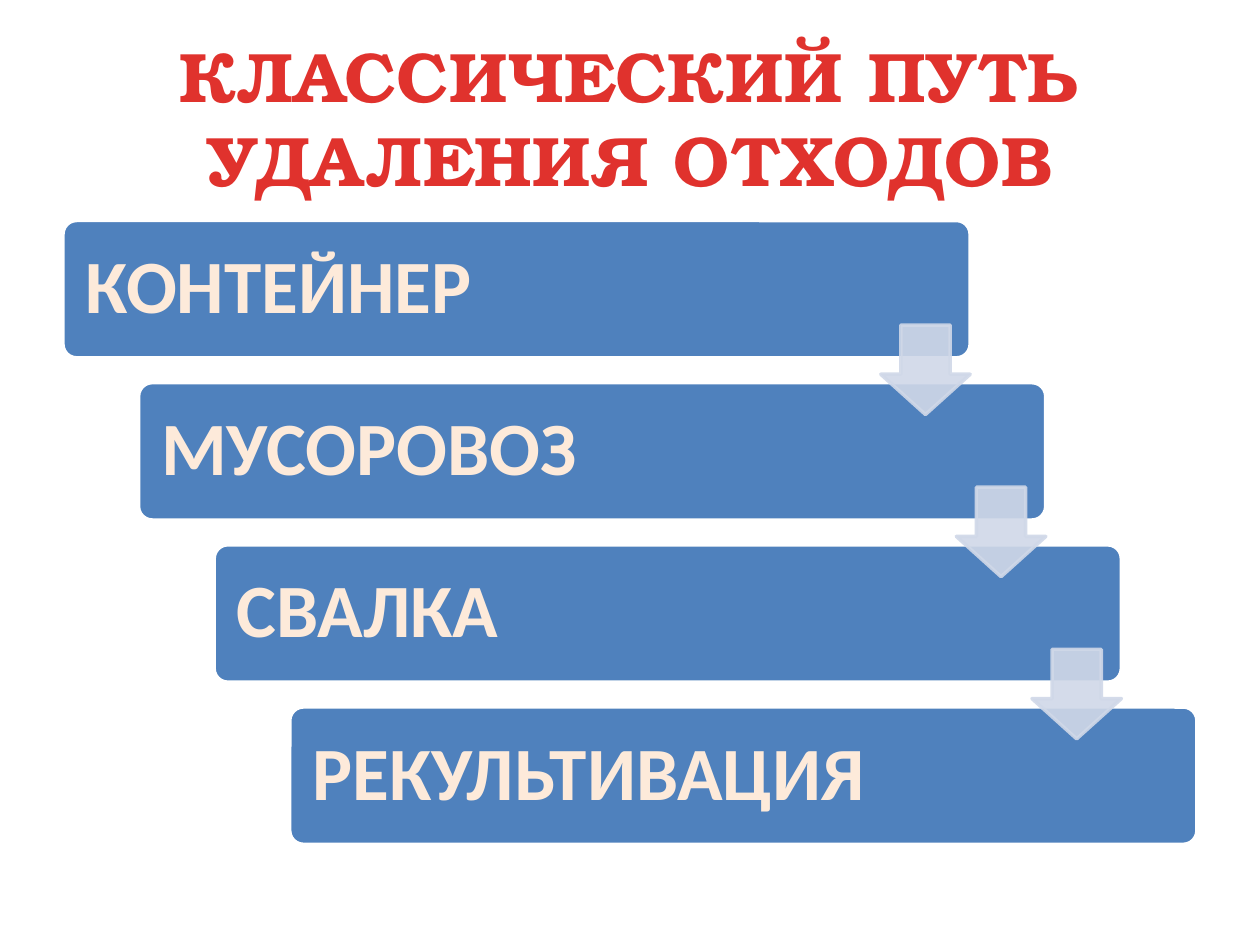
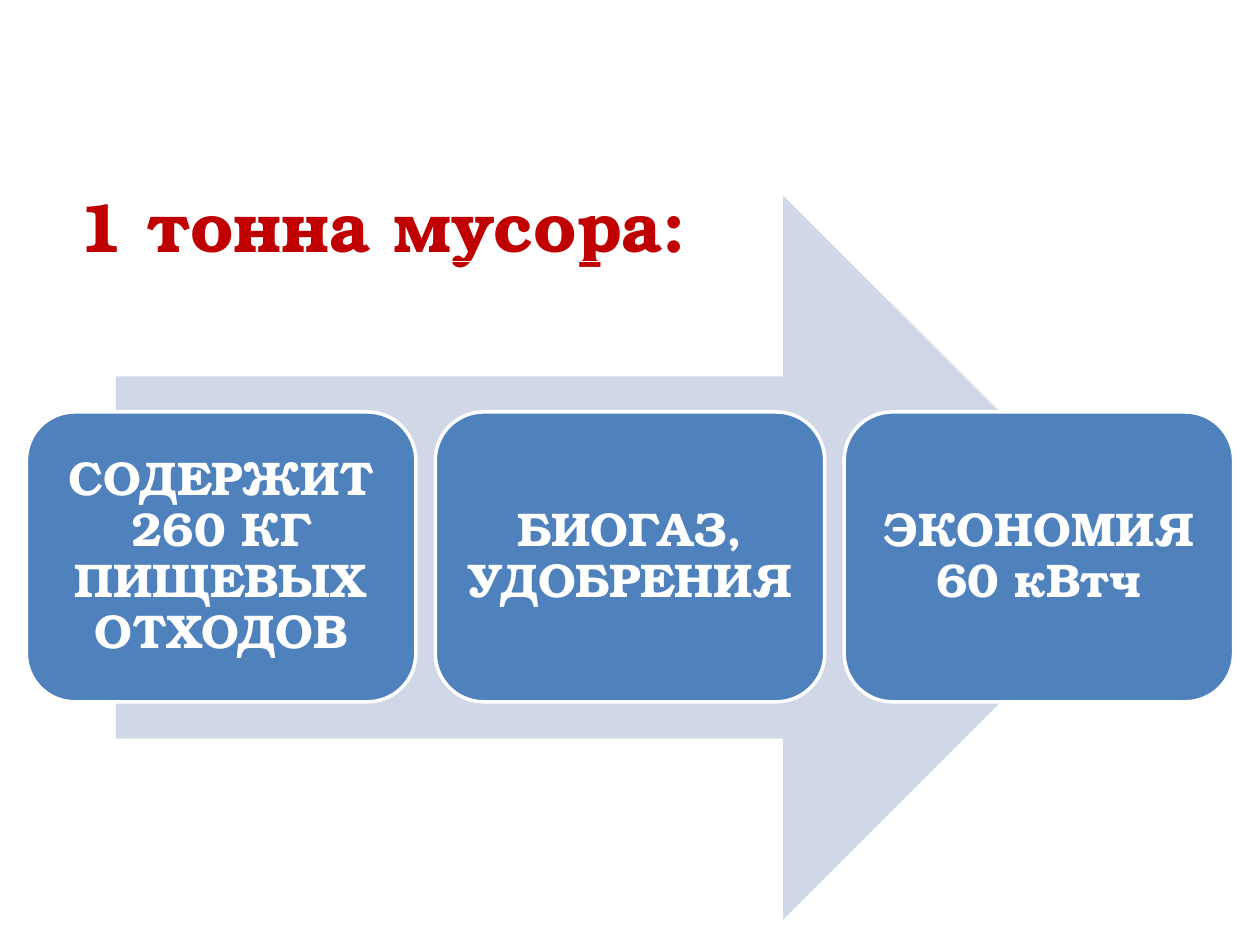
from lxml.etree import SubElement
from pptx import Presentation
from pptx.dml.color import RGBColor
from pptx.enum.shapes import MSO_SHAPE
from pptx.enum.text import MSO_ANCHOR, PP_ALIGN
from pptx.oxml.ns import qn
from pptx.util import Inches, Pt

SLIDE_WIDTH, SLIDE_HEIGHT = 10, 7.5
SERIF, SANS = "TeX Gyre Bonum", "Calibri"
BLUE, PALE_BLUE, WHITE, CREAM = "4F81BD", "D0D8E8", "FFFFFF", "FDEADA"
TITLE_RED, DARK_RED = "E0322D", "C00000"
CORNER_INSET = 0.29  # share of the corner radius that a rounded box keeps free of text

ROUTE = ["КОНТЕЙНЕР", "МУСОРОВОЗ", "СВАЛКА", "РЕКУЛЬТИВАЦИЯ"]
YIELDS = ["СОДЕРЖИТ 260 КГ ПИЩЕВЫХ ОТХОДОВ", "БИОГАЗ, УДОБРЕНИЯ", "ЭКОНОМИЯ 60 кВтч"]


def color(hex_code):
    return RGBColor.from_string(hex_code)


def box(left, top, width, height):
    return [Inches(length) for length in (left, top, width, height)]


def write(frame, text, size, font, hue, align=PP_ALIGN.CENTER, spacing=None):
    frame.word_wrap = True
    paragraph = frame.paragraphs[0]
    paragraph.text = text
    paragraph.alignment = align
    paragraph.line_spacing = spacing
    paragraph.font.size = Pt(size)
    paragraph.font.name = font
    paragraph.font.bold = True
    paragraph.font.color.rgb = color(hue)


def set_margins(frame, inset):
    frame.margin_left = frame.margin_right = Inches(inset)
    frame.margin_top = frame.margin_bottom = Inches(inset)


def add_figure(slide, preset, place, fill, line=None, adjustments=()):
    figure = slide.shapes.add_shape(preset, *box(*place))
    figure.shadow.inherit = False
    figure.fill.solid()
    figure.fill.fore_color.rgb = color(fill)
    if line:
        figure.line.color.rgb = color(line)
        figure.line.width = Pt(2)
    else:
        figure.line.fill.background()
    for index, value in enumerate(adjustments):
        figure.adjustments[index] = value
    return figure


def add_card(slide, place, text, size, font, hue, align, rounding, inset):
    card = add_figure(slide, MSO_SHAPE.ROUNDED_RECTANGLE, place, BLUE, WHITE, [rounding])
    frame = card.text_frame
    frame.vertical_anchor = MSO_ANCHOR.MIDDLE
    set_margins(frame, max(0, inset - CORNER_INSET * rounding * place[3]))
    write(frame, text, size, font, hue, align, 0.9)


def add_step_arrow(slide, left, top):
    side = 0.71
    arrow = add_figure(slide, MSO_SHAPE.DOWN_ARROW, (left, top, side, side),
                       PALE_BLUE, PALE_BLUE, [0.55, 0.45])
    # Fill and line are both 90 % opaque
    for hue in arrow.element.spPr.iter(qn("a:srgbClr")):
        SubElement(hue, qn("a:alpha"), val="90000")


def add_title(slide, text):
    title = slide.shapes.add_textbox(*box(0.5, 0.3, SLIDE_WIDTH - 1, 1.25))
    title.text_frame.vertical_anchor = MSO_ANCHOR.MIDDLE
    write(title.text_frame, text, 40, SERIF, TITLE_RED)
    title.text_frame.paragraphs[0].runs[0].font._element.set("spc", "50")


def add_caption_table(slide, text):
    table = slide.shapes.add_table(1, 1, *box(0, 1.31, 6.06, 0.41)).table
    table.first_row = table.horz_banding = False
    cell = table.cell(0, 0)
    cell.fill.background()
    write(cell.text_frame, text, 40, SERIF, DARK_RED)


def build_route(slide):
    add_title(slide, "КЛАССИЧЕСКИЙ ПУТЬ УДАЛЕНИЯ ОТХОДОВ")
    left, top, step_x, step_y = 0.5, 1.75, 0.6, 1.287
    corners = [(left + i * step_x, top + i * step_y) for i in range(len(ROUTE))]
    for (x, y), stage in zip(corners, ROUTE):
        add_card(slide, (x, y, 7.2, 1.09), stage, 43, SANS, CREAM,
                 PP_ALIGN.LEFT, 0.1, 0.18)
    # Each arrow links a stage to the next one
    for x, y in corners[:-1]:
        add_step_arrow(slide, x + 6.49, y + 0.83)


def build_yields(slide):
    add_figure(slide, MSO_SHAPE.RIGHT_ARROW, (0.92, 1.55, 8.17, 5.75), PALE_BLUE)
    margin, width = 0.21, 3.09
    pitch = (SLIDE_WIDTH - 2 * margin - width) / (len(YIELDS) - 1)
    for column, text in enumerate(YIELDS):
        add_card(slide, (margin + column * pitch, 3.27, width, 2.3), text, 27,
                 SERIF, WHITE, PP_ALIGN.CENTER, 0.1667, 0.11)
    add_caption_table(slide, "1 тонна мусора:")


def main():
    deck = Presentation()
    deck.slide_width, deck.slide_height = Inches(SLIDE_WIDTH), Inches(SLIDE_HEIGHT)
    blank = deck.slide_layouts[6]
    for build in (build_route, build_yields):
        build(deck.slides.add_slide(blank))
    deck.save("out.pptx")


if __name__ == "__main__":
    main()
